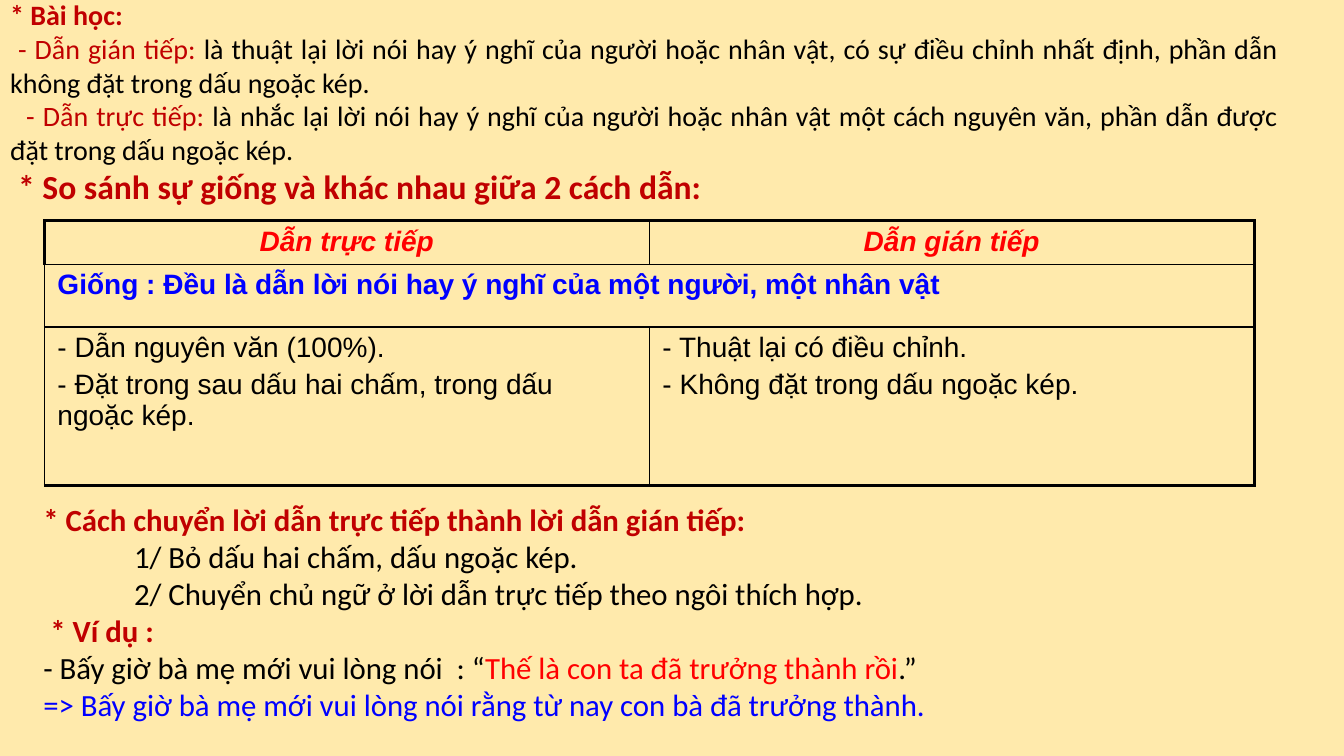
"""Build the lesson slide on direct and indirect quotation."""
from dataclasses import dataclass

import pptx
import pptx.dml.color
import pptx.enum.text
import pptx.oxml
import pptx.oxml.ns
import pptx.util

Inches = pptx.util.Inches
Pt = pptx.util.Pt
ALIGN = pptx.enum.text.PP_ALIGN

COLORS = {
    "background": "FFEAAC",
    "black": "000000",
    "heading": "C00000",
    "red": "FF0000",
    "blue": "0000FF",
}


@dataclass(frozen=True)
class Run:
    """A stretch of text with one look."""
    text: str
    color: str = "black"
    bold: bool = False
    italic: bool = False


@dataclass(frozen=True)
class Para:
    """A paragraph with its size, alignment and indents in inches."""
    runs: tuple[Run, ...]
    size: int
    align: int = ALIGN.LEFT
    margin: float = 0
    first: float = 0


@dataclass(frozen=True)
class Box:
    """A body text area and its paragraphs."""
    left: float
    top: float
    width: float
    height: float
    paras: tuple[Para, ...]


@dataclass(frozen=True)
class Cell:
    """A table cell, its place and its paragraphs."""
    row: int
    col: int
    paras: tuple[Para, ...]
    merged: bool = False


def heading(text: str) -> Run:
    """Return a bold dark red run."""
    return Run(text, "heading", bold=True)


def header(text: str) -> tuple[Para, ...]:
    """Return the content of a table column header."""
    return (Para((Run(text, "red", True, True),), 20, ALIGN.CENTER),)


def points(*texts: str) -> tuple[Para, ...]:
    """Return plain table paragraphs."""
    return tuple(Para((Run(text),), 20) for text in texts)


LESSON = Box(0, -0.07, 12.78, 2.19, (
    Para((heading("* Bài học:"),), 20, ALIGN.JUSTIFY),
    Para((Run("- Dẫn gián tiếp: ", "heading"),
          Run("là thuật lại lời nói hay ý nghĩ của người hoặc nhân vật, có sự điều chỉnh "
              "nhất định, phần dẫn không đặt trong dấu ngoặc kép.")),
         20, ALIGN.JUSTIFY, first=0.08),
    Para((Run("- Dẫn trực tiếp: ", "heading"),
          Run("là nhắc lại lời nói hay ý nghĩ của người hoặc nhân vật một cách nguyên văn, "
              "phần dẫn được đặt trong dấu ngoặc kép.")),
         20, ALIGN.JUSTIFY, first=0.16),
    Para((heading("* So sánh sự giống và khác nhau giữa 2 cách dẫn:"),),
         24, ALIGN.JUSTIFY, first=0.08),
))

CONVERSION = Box(0.33, 4.92, 13, 2.32, (
    Para((heading("* Cách chuyển lời dẫn trực tiếp thành lời dẫn gián tiếp:"),), 22),
    Para((Run("1/ Bỏ dấu hai chấm, dấu ngoặc kép."),), 22, margin=0.9),
    Para((Run("2/ Chuyển chủ ngữ ở lời dẫn trực tiếp theo ngôi thích hợp."),), 22, margin=0.9),
    Para((heading("* Ví dụ :"),), 22, first=0.07),
    Para((Run("- Bấy giờ bà mẹ mới vui lòng nói  : “"),
          Run("Thế là con ta đã trưởng thành rồi", "red"), Run(".”")), 22),
    Para((Run("=> Bấy giờ bà mẹ mới vui lòng nói rằng từ nay con bà đã trưởng thành.", "blue"),), 22),
))

COLUMN_WIDTH = 6
ROW_HEIGHTS = (0.43, 0.62, 1.57)
CELLS = (
    Cell(0, 0, header("Dẫn trực tiếp")),
    Cell(0, 1, header("Dẫn gián tiếp")),
    Cell(1, 0, (Para((Run("Giống : Đều là dẫn lời nói hay ý nghĩ của một người, một nhân vật",
                          "blue", True),), 20),), merged=True),
    Cell(2, 0, points("- Dẫn nguyên văn (100%).",
                      "- Đặt trong sau dấu hai chấm, trong dấu ngoặc kép.")),
    Cell(2, 1, points("- Thuật lại có điều chỉnh.", "- Không đặt trong dấu ngoặc kép.")),
)


def rgb(name: str) -> pptx.dml.color.RGBColor:
    """Return a named colour."""
    return pptx.dml.color.RGBColor.from_string(COLORS[name])


def write(tf: pptx.text.text.TextFrame, paras: tuple[Para, ...], font: str, gap: float) -> None:
    """Fill a text frame, with gap points between paragraphs."""
    for i, para in enumerate(paras):
        p = tf.paragraphs[0] if i == 0 else tf.add_paragraph()
        pPr = p._p.get_or_add_pPr()
        pPr.set("marL", str(Inches(para.margin)))
        pPr.set("indent", str(Inches(para.first)))
        pPr.append(pptx.oxml.parse_xml(f'<a:buNone {pptx.oxml.ns.nsdecls("a")}/>'))
        p.alignment = para.align
        p.space_before = Pt(gap if i else 0)
        for run in para.runs:
            r = p.add_run()
            r.text = run.text
            r.font.name = font
            r.font.size = Pt(para.size)
            r.font.bold = run.bold
            r.font.italic = run.italic
            r.font.color.rgb = rgb(run.color)


def place(sp: pptx.shapes.placeholder.SlidePlaceholder, box: Box) -> None:
    """Move a body placeholder and fill it."""
    sp.left, sp.top = Inches(box.left), Inches(box.top)
    sp.width, sp.height = Inches(box.width), Inches(box.height)
    tf = sp.text_frame
    tf.word_wrap = True
    tf.auto_size = pptx.enum.text.MSO_AUTO_SIZE.SHAPE_TO_FIT_TEXT
    write(tf, box.paras, "Calibri", 0)


def border(cell: pptx.table._Cell, thick: dict[str, bool]) -> None:
    """Draw the four sides of a cell, thick or thin."""
    tcPr = cell._tc.get_or_add_tcPr()
    for side, is_thick in thick.items():
        tcPr.append(pptx.oxml.parse_xml(
            f'<a:ln{side} {pptx.oxml.ns.nsdecls("a")} w="{Pt(2.25 if is_thick else 1)}">'
            f'<a:solidFill><a:srgbClr val="{COLORS["black"]}"/></a:solidFill></a:ln{side}>'))


def add_comparison(s: pptx.slide.Slide) -> None:
    """Add the table comparing the two ways of quoting."""
    table = s.shapes.add_table(len(ROW_HEIGHTS), 2, Inches(0.44), Inches(2.19),
                               Inches(2 * COLUMN_WIDTH), Inches(sum(ROW_HEIGHTS))).table
    table.first_row = table.horz_banding = False
    for column in table.columns:
        column.width = Inches(COLUMN_WIDTH)
    for row, height in zip(table.rows, ROW_HEIGHTS):
        row.height = Inches(height)
    for item in CELLS:
        cell = table.cell(item.row, item.col)
        covered = [cell]
        if item.merged:
            covered.append(table.cell(item.row, 1))
            cell.merge(covered[-1])
        for part in covered:
            border(part, {"L": item.row == item.col == 0,
                          "R": item.col == 1 or item.merged,
                          "T": item.row == 0,
                          "B": item.row == len(ROW_HEIGHTS) - 1})
            part.fill.background()
        cell.margin_left = cell.margin_right = Inches(0.13)
        cell.margin_top = cell.margin_bottom = Inches(0.05)
        write(cell.text_frame, item.paras, "Arial", 4)


def main() -> None:
    """Build and save the slide."""
    prs = pptx.Presentation()
    prs.slide_width, prs.slide_height = Inches(13.33), Inches(7.5)
    s = prs.slides.add_slide(prs.slide_layouts.get_by_name("Two Content"))
    s.background.fill.solid()
    s.background.fill.fore_color.rgb = rgb("background")
    title, lesson, conversion = list(s.placeholders)[:3]
    title.element.getparent().remove(title.element)
    place(lesson, LESSON)
    add_comparison(s)
    place(conversion, CONVERSION)
    prs.save("out.pptx")


if __name__ == "__main__":
    main()
